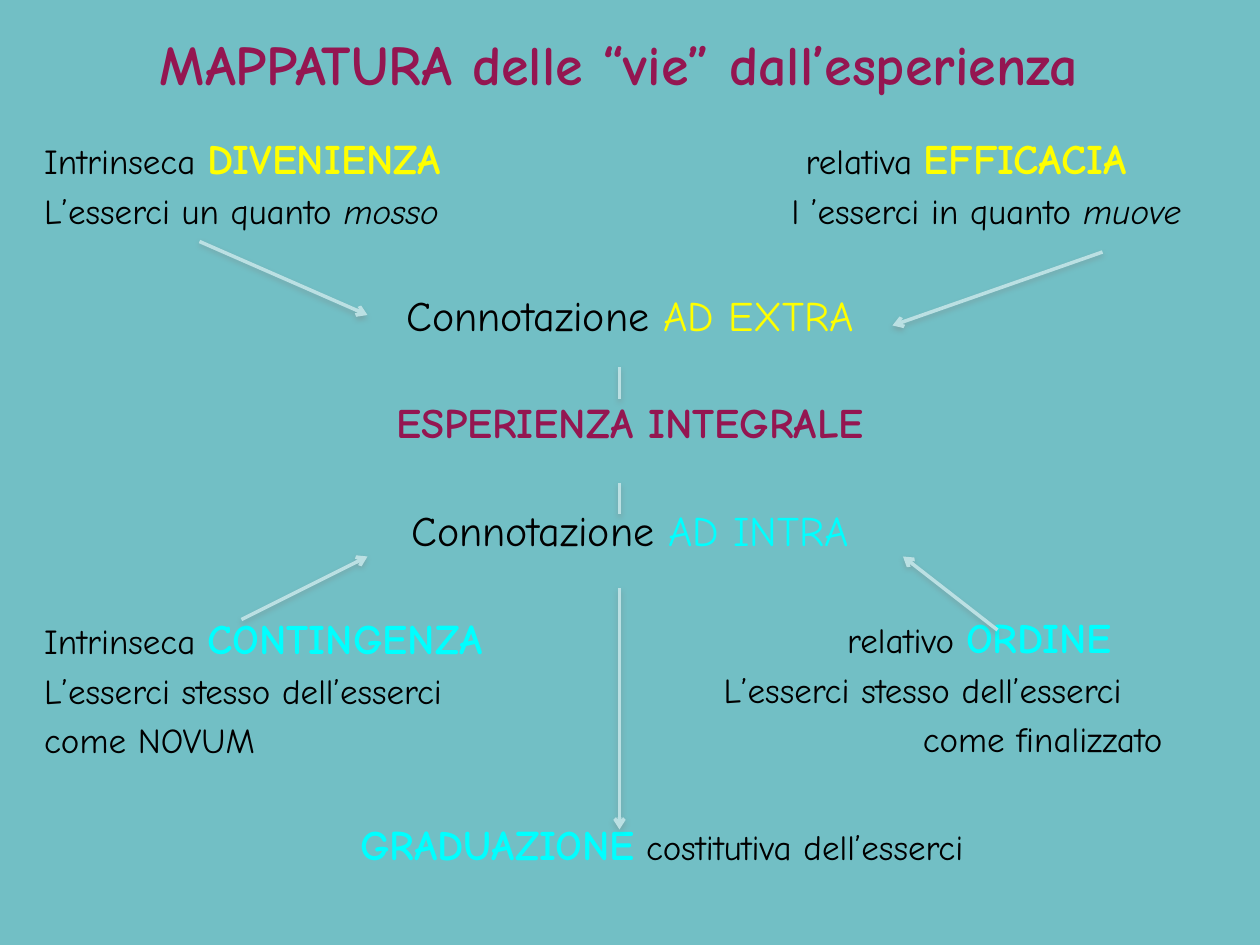
from lxml.etree import SubElement
from pptx import Presentation
from pptx.dml.color import RGBColor
from pptx.enum.shapes import MSO_CONNECTOR
from pptx.enum.text import MSO_ANCHOR, MSO_AUTO_SIZE, PP_ALIGN
from pptx.oxml.ns import qn
from pptx.util import Inches, Pt

FONT = "Comic Neue"
BLACK, PLUM, YELLOW, CYAN = "000000", "941651", "FFFF00", "00FFFF"
BACKGROUND, LINE, SHADOW = "72BFC5", "BBE0E3", "808080"
SMALL, LARGE = 20, 24
SECTION_GAP = 28  # points between the blocks of the map
MIDDLE_GAP = 212  # points between the upper and lower block on the right


def grid(units):
    """Twelfths of an inch: the slide is 120 columns by 90 rows."""
    return Inches(units / 12)


def color(hex_string):
    return RGBColor.from_string(hex_string)


def plain(words):
    return words, SMALL, BLACK, False, False


def italic(words):
    return words, SMALL, BLACK, False, True


def heading(words, ink=BLACK):
    return words, LARGE, ink, False, False


def keyword(words, ink):
    return words, LARGE, ink, True, False


# Each line: alignment, gap above in points, indent in inches, pieces of text
LEFT, CENTER = PP_ALIGN.LEFT, PP_ALIGN.CENTER
MAIN_LINES = [
    (LEFT, 0, 0, [plain("Intrinseca "), keyword("DIVENIENZA", YELLOW)]),
    (LEFT, 0, 0, [plain("L’esserci un quanto "), italic("mosso")]),
    (CENTER, SECTION_GAP, 0, [heading("Connotazione "), heading("AD EXTRA", YELLOW)]),
    (CENTER, SECTION_GAP, 0, [keyword("ESPERIENZA INTEGRALE", PLUM)]),
    (CENTER, SECTION_GAP, 0, [heading("Connotazione "), heading("AD INTRA", CYAN)]),
    (LEFT, SECTION_GAP, 0, [plain("Intrinseca "), keyword("CONTINGENZA", CYAN)]),
    (LEFT, 0, 0, [plain("L’esserci stesso dell’esserci")]),
    (LEFT, 0, 0, [plain("come NOVUM")]),
    (LEFT, SECTION_GAP, 2.51, [keyword("GRADUAZIONE", CYAN),
                               plain(" costitutiva dell’esserci")]),
]
RIGHT_LINES = [
    (LEFT, 0, 0.71, [plain("relativa "), keyword("EFFICACIA", YELLOW)]),
    (LEFT, 0, 0.6, [plain("l ’esserci in quanto "), italic("muove")]),
    (LEFT, MIDDLE_GAP, 1.04, [plain("relativo "), keyword("ORDINE", CYAN)]),
    (LEFT, 0, 0.06, [plain("L’esserci stesso dell’esserci")]),
    (LEFT, 0, 1.64, [plain("come finalizzato")]),
]

# Start and end in grid units, with or without an arrowhead
PATHS = [
    ((19, 23), (35, 30), True),
    ((105, 24), (85, 31), True),
    ((95, 60), (86, 53), True),
    ((23, 59), (35, 53), True),
    ((59, 35), (59, 38), False),
    ((59, 46), (59, 49), False),
    ((59, 56), (59, 79), True),
]


def place(placeholder, left, top, width, height, anchor):
    placeholder.left, placeholder.top = grid(left), grid(top)
    placeholder.width, placeholder.height = grid(width), grid(height)
    frame = placeholder.text_frame
    frame.word_wrap = True
    frame.auto_size = MSO_AUTO_SIZE.NONE
    frame.vertical_anchor = anchor
    return frame


def format_run(run, size, ink, bold, slanted):
    font = run.font
    font.name, font.size = FONT, Pt(size)
    font.bold, font.italic = bold, slanted
    font.color.rgb = color(ink)


def add_title(slide):
    frame = place(slide.shapes.title, 3, 2, 112, 8, MSO_ANCHOR.MIDDLE)
    frame.text = "MAPPATURA delle “vie” dall’esperienza"
    heading_line = frame.paragraphs[0]
    heading_line.alignment = CENTER
    format_run(heading_line.runs[0], 32, PLUM, True, False)


def set_indent(paragraph, indent):
    """Drop the bullet with its hanging indent, and set the left margin."""
    properties = paragraph._p.get_or_add_pPr()
    properties.set("marL", str(int(Inches(indent))))
    properties.set("indent", "0")
    SubElement(properties, qn("a:buNone"))


def add_lines(placeholder, lines, left, width):
    frame = place(placeholder, left, 12, width, 76, MSO_ANCHOR.TOP)
    for number, (alignment, gap, indent, pieces) in enumerate(lines):
        line = frame.add_paragraph() if number else frame.paragraphs[0]
        line.alignment = alignment
        largest = max(piece[1] for piece in pieces)
        line.space_before = Pt(0.2 * largest + gap)
        set_indent(line, indent)
        for words, *style in pieces:
            run = line.add_run()
            run.text = words
            format_run(run, *style)


def add_path(slide, start, end, has_arrowhead):
    path = slide.shapes.add_connector(
        MSO_CONNECTOR.STRAIGHT, *map(grid, start + end))
    path.line.color.rgb = color(LINE)
    path.line.width = Pt(2)
    if has_arrowhead:
        SubElement(path.line._get_or_add_ln(), qn("a:tailEnd"), type="arrow")
    effects = SubElement(path._element.spPr, qn("a:effectLst"))
    shadow = SubElement(effects, qn("a:outerShdw"), blurRad="40000",
                        dist="20000", dir="5400000", rotWithShape="0")
    tint = SubElement(shadow, qn("a:srgbClr"), val=SHADOW)
    SubElement(tint, qn("a:alpha"), val="38000")


def main():
    deck = Presentation()
    deck.slide_width, deck.slide_height = grid(120), grid(90)
    slide = deck.slides.add_slide(deck.slide_layouts.get_by_name("Two Content"))
    slide.background.fill.solid()
    slide.background.fill.fore_color.rgb = color(BACKGROUND)
    add_title(slide)
    add_lines(slide.placeholders[1], MAIN_LINES, left=3, width=114)
    add_lines(slide.placeholders[2], RIGHT_LINES, left=67, width=50)
    for start, end, has_arrowhead in PATHS:
        add_path(slide, start, end, has_arrowhead)
    deck.save("out.pptx")


if __name__ == "__main__":
    main()
